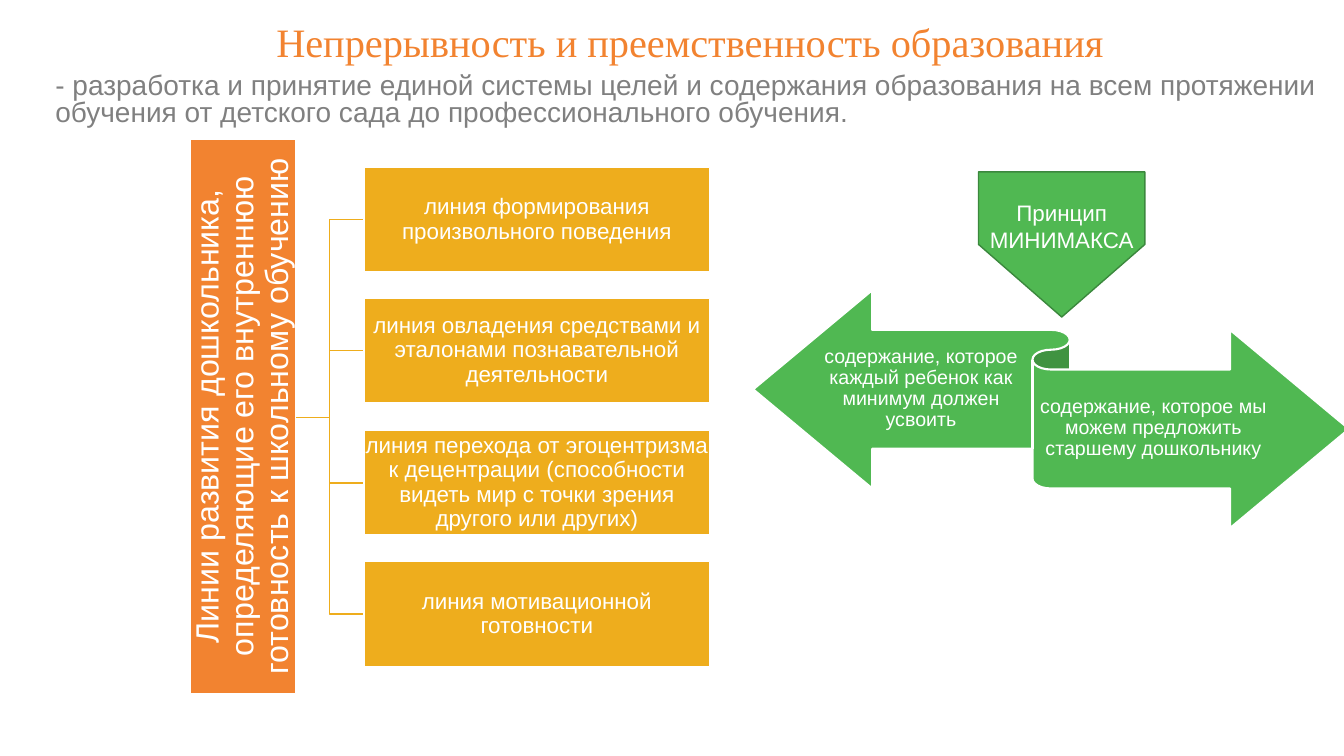
from dataclasses import dataclass

from pptx import Presentation
from pptx.dml.color import RGBColor
from pptx.enum.shapes import MSO_SHAPE
from pptx.enum.text import MSO_ANCHOR, MSO_AUTO_SIZE, PP_ALIGN
from pptx.util import Pt

PX = 9144
RECTANGLE = MSO_SHAPE.RECTANGLE
RIBBON = MSO_SHAPE.LEFT_RIGHT_RIBBON
PENTAGON = MSO_SHAPE.PENTAGON
TOP, MIDDLE, BOTTOM = MSO_ANCHOR.TOP, MSO_ANCHOR.MIDDLE, MSO_ANCHOR.BOTTOM
LEFT, CENTER = PP_ALIGN.LEFT, PP_ALIGN.CENTER
NO_AUTOFIT = MSO_AUTO_SIZE.NONE


@dataclass(frozen=True)
class Theme:
    orange: str = "F28330"
    amber: str = "EEAD1D"
    green: str = "50B852"
    dark_green: str = "3B883D"
    gray: str = "808080"
    white: str = "FFFFFF"
    title_font: str = "Times New Roman"
    body_font: str = "Arial"
    title_size: float = 28.8
    trunk_size: int = 23
    lead_size: int = 20
    branch_size: int = 16
    arrow_size: int = 14


THEME = Theme()

BRANCHES = [
    "линия формирования произвольного поведения",
    "линия овладения средствами и эталонами познавательной деятельности",
    "линия перехода от эгоцентризма к децентрации (способности видеть мир "
    "с точки зрения другого или других)",
    "линия мотивационной готовности",
]
BRANCH_LEFT, BRANCH_TOP, BRANCH_WIDTH, BRANCH_HEIGHT = 361, 166, 343, 104
BRANCH_STEP = 130.4
TRUNK_RIGHT, TRUNK_MIDDLE, BRACKET_BEND = 293, 414, 327


def scaled(*lengths):
    return [round(length * PX) for length in lengths]


def write(shape, text, size, color=THEME.white, font=THEME.body_font, align=CENTER,
          anchor=MIDDLE, spacing=0.9, insets=(10, 5, 10, 5)):
    frame = shape.text_frame
    frame.word_wrap = True
    frame.auto_size = NO_AUTOFIT
    frame.vertical_anchor = anchor
    (frame.margin_left, frame.margin_top,
     frame.margin_right, frame.margin_bottom) = scaled(*insets)
    frame.text = text
    para = frame.paragraphs[0]
    para.alignment = align
    para.line_spacing = spacing
    para.font.name = font
    para.font.size = Pt(size)
    para.font.color.rgb = RGBColor.from_string(color)


def add_title(page, text):
    title = page.shapes.title
    title.left, title.top, title.width, title.height = scaled(147, 21, 1075, 50)
    write(title, text, THEME.title_size, THEME.orange, THEME.title_font, anchor=BOTTOM)


def add_text(page, bounds, text, size, **style):
    box = page.shapes.add_textbox(*scaled(*bounds))
    write(box, text, size, **style)


def add_block(page, kind, bounds, fill, line=THEME.white, line_width=1, rotation=0):
    block = page.shapes.add_shape(kind, *scaled(*bounds))
    block.shadow.inherit = False
    block.rotation = rotation
    block.fill.solid()
    block.fill.fore_color.rgb = RGBColor.from_string(fill)
    block.line.color.rgb = RGBColor.from_string(line)
    block.line.width = Pt(line_width)
    return block


def add_bracket(page, branch_middle):
    builder = page.shapes.build_freeform(TRUNK_RIGHT, TRUNK_MIDDLE, scale=PX)
    builder.add_line_segments(
        [(BRACKET_BEND, TRUNK_MIDDLE), (BRACKET_BEND, branch_middle),
         (BRANCH_LEFT, branch_middle)], close=False)
    bracket = builder.convert_to_shape()
    bracket.shadow.inherit = False
    bracket.fill.background()
    bracket.line.color.rgb = RGBColor.from_string(THEME.amber)
    bracket.line.width = Pt(1)


def add_hierarchy(page):
    tops = [round(BRANCH_TOP + index * BRANCH_STEP) for index in range(len(BRANCHES))]
    for top in reversed(tops):
        add_bracket(page, top + BRANCH_HEIGHT // 2)
    trunk = add_block(page, RECTANGLE, (-34, 361, 550, 104), THEME.orange, rotation=270)
    write(trunk, "Линии развития дошкольника, определяющие его внутреннюю "
          "готовность к школьному обучению", THEME.trunk_size, insets=(2, 2, 2, 2))
    for top, text in zip(tops, BRANCHES):
        bounds = (BRANCH_LEFT, top, BRANCH_WIDTH, BRANCH_HEIGHT)
        branch = add_block(page, RECTANGLE, bounds, THEME.amber)
        write(branch, text, THEME.branch_size, insets=(1, 1, 1, 1))


def add_ribbon(page):
    add_block(page, RIBBON, (747, 288, 591, 236), THEME.green, line_width=1.5)
    for bounds, text in [
        ((816, 328, 195, 116),
         "содержание, которое каждый ребенок как минимум должен усвоить"),
        ((1029, 367, 230, 116),
         "содержание, которое мы можем предложить старшему дошкольнику"),
    ]:
        add_text(page, bounds, text, THEME.arrow_size, insets=(0, 5, 0, 6))


def add_principle(page):
    pointer = add_block(page, PENTAGON, (981, 160, 144, 165), THEME.green,
                        line=THEME.dark_green, rotation=90)
    write(pointer, "Принцип МИНИМАКСА", THEME.branch_size, spacing=1.0,
          insets=(10, 5, 10, 5))
    pointer.text_frame._txBody.bodyPr.set("vert", "vert270")


def main():
    deck = Presentation()
    deck.slide_width, deck.slide_height = scaled(1333, 750)
    page = deck.slides.add_slide(deck.slide_layouts[5])
    add_title(page, "Непрерывность и преемственность образования")
    add_text(page, (45, 69, 1292, 70),
             "- разработка и принятие единой системы целей и содержания образования "
             "на всем протяжении обучения от детского сада до профессионального обучения.",
             THEME.lead_size, color=THEME.gray, align=LEFT, anchor=TOP, spacing=0.8)
    add_ribbon(page)
    add_hierarchy(page)
    add_principle(page)
    deck.save("out.pptx")


if __name__ == "__main__":
    main()
